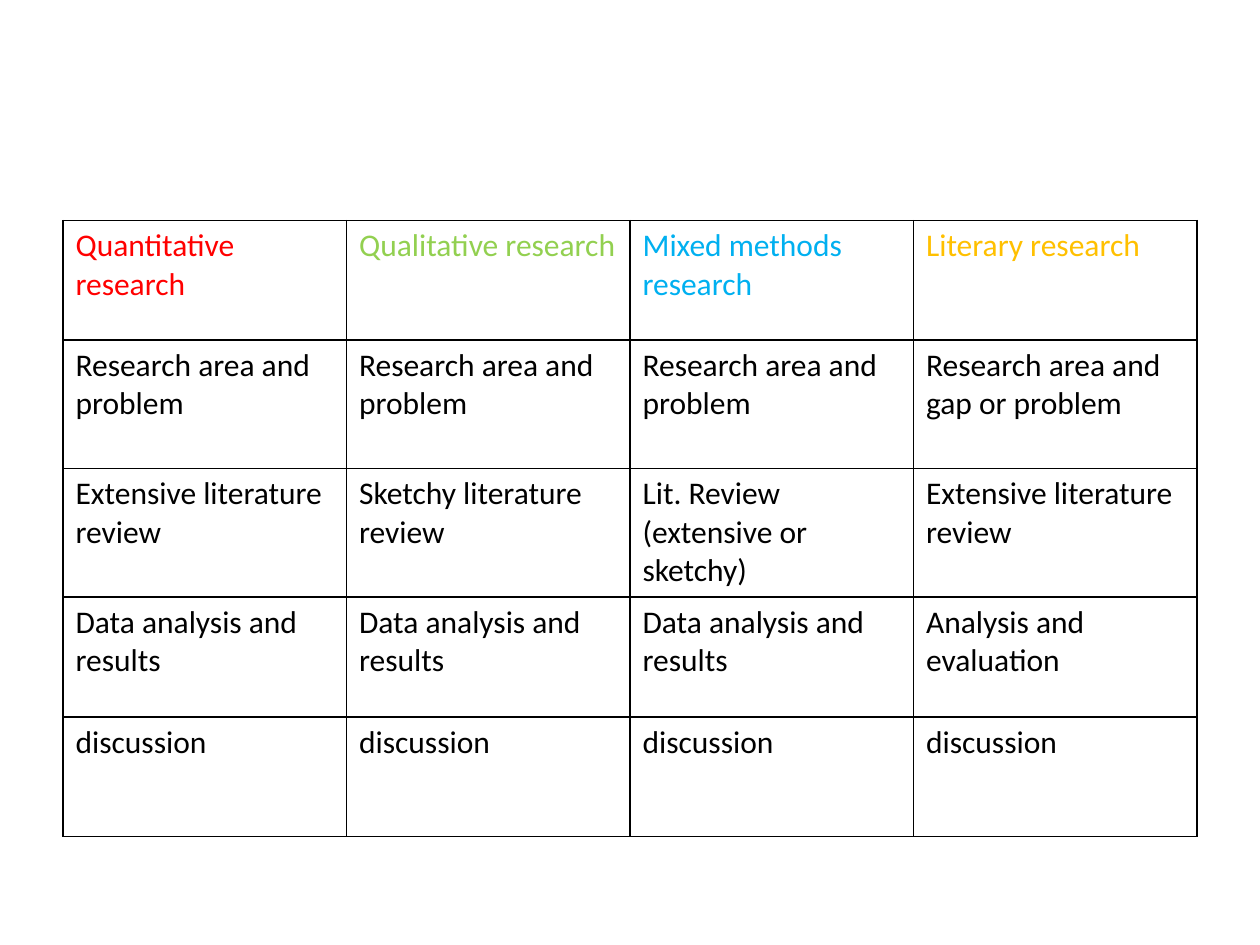
import pptx
import pptx.dml.color
import pptx.oxml
import pptx.oxml.ns
import pptx.util

SLIDE_W, SLIDE_H = 10, 7.5
BLACK = "000000"
HEADER_COLORS = ["FF0000", "92D050", "00B0F0", "FFC000"]
ROW_HEIGHTS = [0.95, 1.02, 1.02, 0.95, 0.95]
ROWS = [
    ["Quantitative research", "Qualitative research",
     "Mixed methods\nresearch", "Literary research"],
    ["Research area and problem"] * 3 + ["Research area and gap or problem"],
    ["Extensive literature review", "Sketchy literature\nreview",
     "Lit. Review (extensive or sketchy)", "Extensive literature review"],
    ["Data analysis and results"] * 3 + ["Analysis and evaluation"],
    ["discussion"] * 4,
]


def rgb(value):
    return pptx.dml.color.RGBColor.from_string(value)


def add_borders(cell, color=BLACK, width=1):
    tc_pr = cell._tc.get_or_add_tcPr()
    for side in ("lnL", "lnR", "lnT", "lnB"):
        tc_pr.append(pptx.oxml.parse_xml(
            f'<a:{side} {pptx.oxml.ns.nsdecls("a")} w="{pptx.util.Pt(width)}">'
            f'<a:solidFill><a:srgbClr val="{color}"/></a:solidFill></a:{side}>'))


def fill_cell(cell, text, color):
    add_borders(cell)
    cell.fill.background()
    cell.text_frame.text = text
    for p in cell.text_frame.paragraphs:
        for r in p.runs:
            r.font.name = "Calibri"
            r.font.size = pptx.util.Pt(18)
            r.font.bold = False
            r.font.color.rgb = rgb(color)


def add_research_table(slide, left, top, width):
    n_cols = len(HEADER_COLORS)
    box = [pptx.util.Inches(v) for v in (left, top, width, sum(ROW_HEIGHTS))]
    table = slide.shapes.add_table(len(ROWS), n_cols, *box).table
    table.first_row = table.horz_banding = False
    for col in table.columns:
        col.width = pptx.util.Inches(width / n_cols)
    for i, (texts, height) in enumerate(zip(ROWS, ROW_HEIGHTS)):
        table.rows[i].height = pptx.util.Inches(height)
        colors = HEADER_COLORS if i == 0 else [BLACK] * n_cols
        for j, (text, color) in enumerate(zip(texts, colors)):
            fill_cell(table.cell(i, j), text, color)


def main():
    prs = pptx.Presentation()
    prs.slide_width = pptx.util.Inches(SLIDE_W)
    prs.slide_height = pptx.util.Inches(SLIDE_H)
    slide = prs.slides.add_slide(prs.slide_layouts[6])
    margin = SLIDE_W * 0.05
    add_research_table(slide, margin, 1.75, SLIDE_W - 2 * margin)
    prs.save("out.pptx")


if __name__ == "__main__":
    main()
